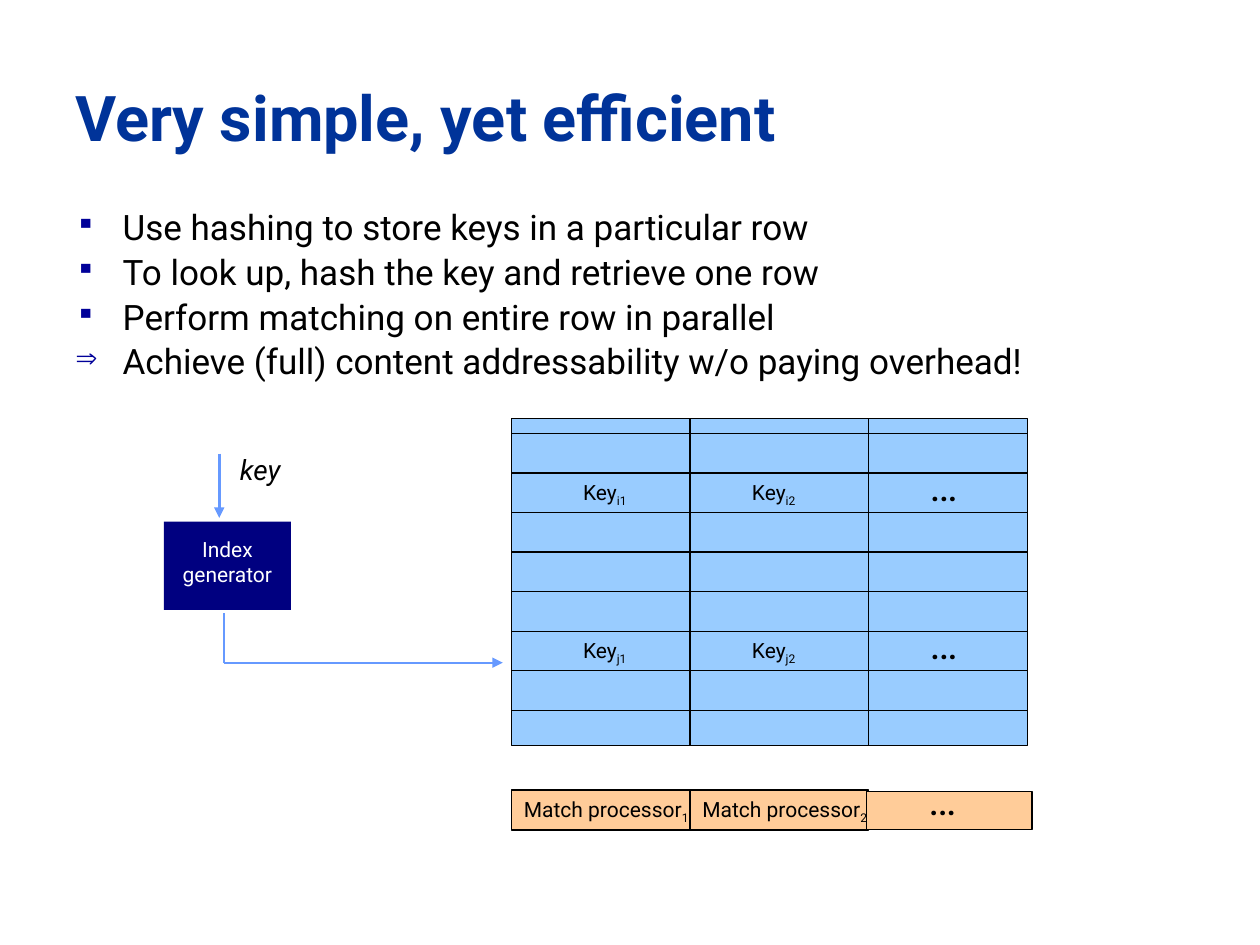
from lxml import etree
from pptx import Presentation
from pptx.dml.color import RGBColor
from pptx.enum import shapes as kinds, text as styles
from pptx.oxml.ns import qn
from pptx.util import Pt

BLACK = RGBColor(0, 0, 0)
WHITE = RGBColor(255, 255, 255)
TITLE_BLUE = RGBColor(0x00, 0x33, 0x99)
NAVY = RGBColor(0x00, 0x00, 0x80)
SKY = RGBColor(0x99, 0xCC, 0xFF)
PEACH = RGBColor(0xFF, 0xCC, 0x99)
ARROW_BLUE = RGBColor(0x66, 0x99, 0xFF)
FONT = "Roboto"

BULLETS = [
    ("▪", "Use hashing to store keys in a particular row"),
    ("▪", "To look up, hash the key and retrieve one row"),
    ("▪", "Perform matching on entire row in parallel"),
    ("⇒", "Achieve (full) content addressability w/o paying overhead!"),
]


def add_bullet(paragraph, mark):
    props = paragraph._p.get_or_add_pPr()
    props.set("marL", str(Pt(27)))
    props.set("indent", str(-Pt(27)))
    colour = etree.SubElement(props, qn("a:buClr"))
    etree.SubElement(colour, qn("a:srgbClr"), val="000099")
    etree.SubElement(props, qn("a:buSzPct"), val="80000")
    etree.SubElement(props, qn("a:buChar"), char=mark)


def add_text(slide, box, lines, size=12, color=BLACK, bold=False, italic=False,
             align=None, anchor=None, wrap=False, fit=True, marks=(),
             subscript="", leading=None, gap=0):
    """Place one paragraph per line; the subscript follows the last one."""
    frame = slide.shapes.add_textbox(*map(Pt, box)).text_frame
    frame.word_wrap = wrap
    if fit:
        frame.auto_size = styles.MSO_AUTO_SIZE.SHAPE_TO_FIT_TEXT
    if anchor is not None:
        frame.vertical_anchor = anchor
    for number, line in enumerate(lines):
        paragraph = frame.add_paragraph() if number else frame.paragraphs[0]
        if number and gap:
            paragraph.space_before = Pt(gap)
        if leading:
            paragraph.line_spacing = leading
        if marks:
            add_bullet(paragraph, marks[number])
        paragraph.alignment = align
        paragraph.add_run().text = line
        if subscript and number == len(lines) - 1:
            lowered = paragraph.add_run()
            lowered.text = subscript
            lowered._r.get_or_add_rPr().set("baseline", "-25000")
        for run in paragraph.runs:
            font = run.font
            font.name, font.size = FONT, Pt(size)
            font.bold, font.italic = bold, italic
            font.color.rgb = color


def add_box(slide, box, fill, outlined=True):
    rect = slide.shapes.add_shape(kinds.MSO_SHAPE.RECTANGLE, *map(Pt, box))
    rect.shadow.inherit = False
    rect.fill.solid()
    rect.fill.fore_color.rgb = fill
    if outlined:
        rect.line.color.rgb = BLACK
        rect.line.width = Pt(0.75)
    else:
        rect.line.fill.background()


def add_line(slide, start, end, color=BLACK, width=0.75, arrow=False):
    line = slide.shapes.add_connector(
        kinds.MSO_CONNECTOR.STRAIGHT, *map(Pt, (*start, *end)))
    line.line.color.rgb = color
    line.line.width = Pt(width)
    if arrow:
        etree.SubElement(line.line._get_or_add_ln(), qn("a:tailEnd"), type="triangle")
    etree.SubElement(line._element.spPr, qn("a:effectLst"))


def add_title(slide, box):
    add_text(slide, box, ["Very simple, yet efficient"], size=36, bold=True,
             color=TITLE_BLUE, anchor=styles.MSO_ANCHOR.MIDDLE, wrap=True, fit=False)


def add_body(slide, box):
    marks, lines = zip(*BULLETS)
    add_text(slide, box, lines, size=20, marks=marks, wrap=True, fit=False,
             leading=0.9, gap=4)


def add_index_generator(slide, box):
    """Draw the generator with the key coming in and the row arrow going out."""
    left, top, width, height = box
    centre = styles.PP_ALIGN.CENTER
    add_box(slide, box, NAVY, outlined=False)
    add_text(slide, (left, top + 5, width, 36), ["Index generator"],
             color=WHITE, align=centre, wrap=True)
    key_x = left + 31.7
    add_line(slide, (key_x, top - 38.9), (key_x, top - 2.2), ARROW_BLUE, 1.5, arrow=True)
    add_text(slide, (left + 35.3, top - 43.2, 39.6, 26.6), ["key"],
             size=16, italic=True, align=centre)
    out_x, out_y = left + 34.6, top + 80.6
    add_line(slide, (out_x, top + height + 2), (out_x, out_y), ARROW_BLUE, 1)
    add_line(slide, (out_x, out_y), (left + 193.7, out_y), ARROW_BLUE, 1, arrow=True)


def add_memory(slide, box, column_width):
    left, top, width, height = box
    first_line, pitch = top + 8.7, 22.6
    add_box(slide, box, SKY)
    for row in range(8):
        y = first_line + row * pitch
        add_line(slide, (left, y), (left + width, y))
    for column in (1, 2):
        x = left + column * column_width
        add_line(slide, (x, top + height), (x, top))
    for row, letter in ((1, "i"), (5, "j")):
        y = first_line + row * pitch
        for number, offset in ((1, 33.8), (2, 130.3)):
            add_text(slide, (left + offset, y, 40.3, 21.6), ["Key"],
                     subscript=f"{letter}{number}")
        add_text(slide, (left + 231.8, y - 11.5, 38.2, 36), ["…"], size=24)


def add_match_processors(slide, box, column_width):
    left, top, width, height = box
    for number in (1, 2):
        x = left + (number - 1) * column_width
        add_box(slide, (x, top, column_width, height), PEACH)
        add_text(slide, (x, top, 108.7, 21.6), ["Match processor"], subscript=str(number))
    rest = 2 * column_width - 1
    add_box(slide, (left + rest, top + 1, width - rest, height - 1.4), PEACH)
    add_text(slide, (left + 231.1, top - 13, 38.2, 36), ["…"], size=24)


def main():
    deck = Presentation()
    deck.slide_width, deck.slide_height = Pt(720), Pt(540)
    slide = deck.slides.add_slide(deck.slide_layouts[6])
    column_width = 102
    add_title(slide, (36, 21.6, 648, 90))
    add_body(slide, (36, 116.6, 648, 113))
    add_memory(slide, (292.3, 239, 295, 187), column_width)
    add_match_processors(slide, (292.3, 451.4, 297.4, 23), column_width)
    add_index_generator(slide, (93.6, 298.1, 72.7, 50.4))
    deck.save("out.pptx")


if __name__ == "__main__":
    main()
